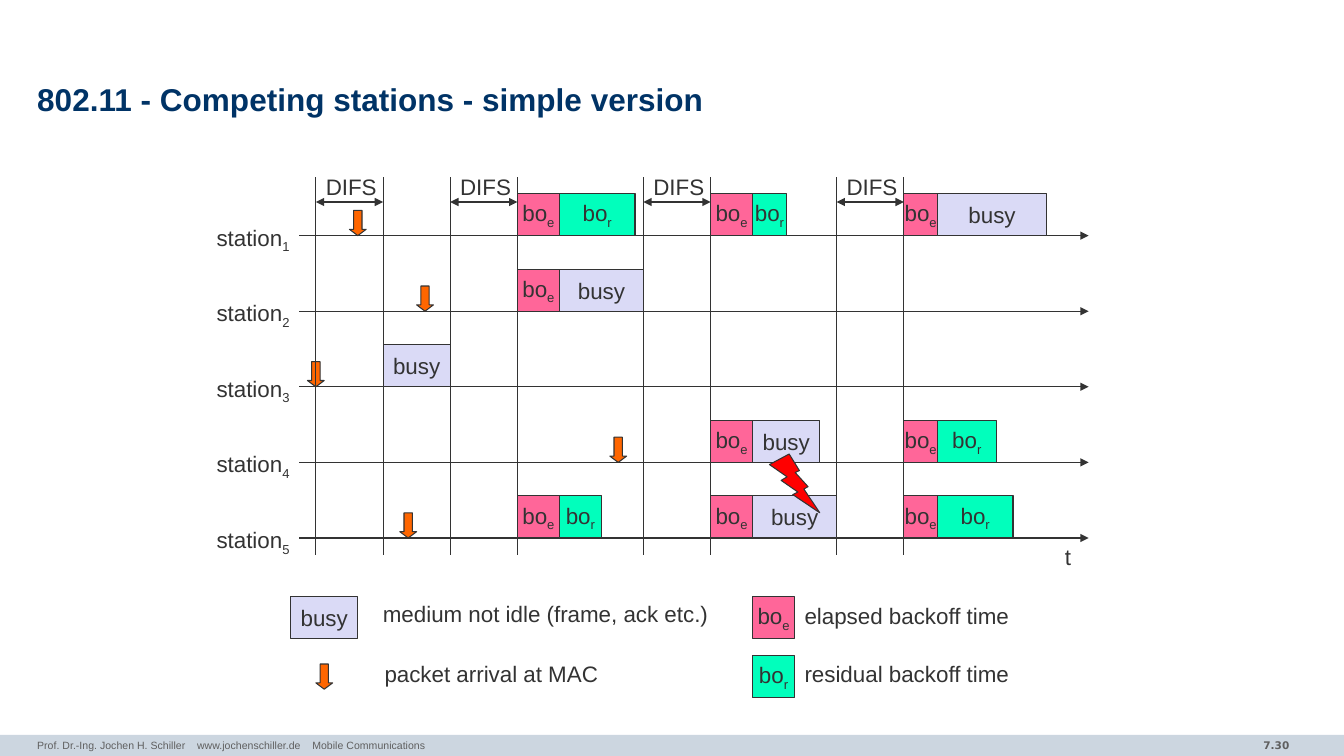
from lxml import etree
from pptx import Presentation
from pptx.dml.color import RGBColor
from pptx.enum.shapes import MSO_CONNECTOR, MSO_SHAPE
from pptx.enum.text import MSO_ANCHOR, MSO_AUTO_SIZE, PP_ALIGN
from pptx.oxml.ns import qn
from pptx.util import Pt

LEFT, CENTER, RIGHT = PP_ALIGN.LEFT, PP_ALIGN.CENTER, PP_ALIGN.RIGHT
TOP, MIDDLE = MSO_ANCHOR.TOP, MSO_ANCHOR.MIDDLE
FIT, FIXED = MSO_AUTO_SIZE.SHAPE_TO_FIT_TEXT, MSO_AUTO_SIZE.NONE
RECT, DOWN, BOLT = MSO_SHAPE.RECTANGLE, MSO_SHAPE.DOWN_ARROW, MSO_SHAPE.LIGHTNING_BOLT
STRAIGHT = MSO_CONNECTOR.STRAIGHT

INK, GREY, NAVY, BAND = "333333", "5F5F5F", "003366", "CCD6E0"
ORANGE, RED = "FF6600", "FF0000"
U = 6
BLOCKS = {
    "busy": ("DADAF6", "busy", ""),
    "elapsed": ("FF6699", "bo", "e"),
    "residual": ("01FFBC", "bo", "r"),
}
BODY = {"size": Pt(16), "name": "Arial"}
SMALL = {"size": Pt(7.5), "name": "Arial"}
PAGE = {"size": Pt(7.5), "name": "DejaVu Sans", "bold": True}
HEADING = {"size": Pt(22.5), "name": "Arial", "bold": True}

GUIDES = [0, 8, 16, 24, 39, 47, 62, 70]
ARRIVALS = [4, 12, -1, 35, 10]
SCHEDULE = [
    [(24, "elapsed", 5), (29, "residual", 9), (47, "elapsed", 5),
     (52, "residual", 4), (70, "elapsed", 4), (74, "busy", 13)],
    [(24, "elapsed", 5), (29, "busy", 10)],
    [(8, "busy", 8)],
    [(47, "elapsed", 5), (52, "busy", 8), (70, "elapsed", 4), (74, "residual", 7)],
    [(24, "elapsed", 5), (29, "residual", 5), (47, "elapsed", 5),
     (52, "busy", 10), (70, "elapsed", 4), (74, "residual", 9)],
]


def rgb(value):
    return RGBColor.from_string(value)


def write(tf, text, sub="", font=BODY, color=INK, align=LEFT):
    p = tf.paragraphs[0]
    p.alignment = align
    for part in filter(None, (text, sub)):
        r = p.add_run()
        r.text = part
        for key, value in font.items():
            setattr(r.font, key, value)
        r.font.color.rgb = rgb(color)
    if sub:
        r.font._element.set("baseline", "-25000")
    return p


def add_label(s, x, y, w, text, sub=""):
    tf = s.shapes.add_textbox(Pt(x), Pt(y), Pt(w), Pt(26.6)).text_frame
    tf.word_wrap = False
    tf.auto_size = FIT
    write(tf, text, sub)


def add_figure(s, kind, x, y, w, h, fill, line=INK):
    sp = s.shapes.add_shape(kind, Pt(x), Pt(y), Pt(w), Pt(h))
    sp.shadow.inherit = False
    sp.fill.solid()
    sp.fill.fore_color.rgb = rgb(fill)
    if line:
        sp.line.color.rgb = rgb(line)
        sp.line.width = Pt(0.75)
    else:
        sp.line.fill.background()
    return sp


def add_block(s, x, y, w, kind):
    fill, text, sub = BLOCKS[kind]
    tf = add_figure(s, RECT, x, y, w, 5 * U, fill).text_frame
    tf.word_wrap = False
    tf.vertical_anchor = MIDDLE
    write(tf, text, sub, align=CENTER)


def add_arrival(s, x, y):
    sp = add_figure(s, DOWN, x, y, 2 * U, 3 * U, ORANGE)
    sp.adjustments[0] = 0.5
    sp.adjustments[1] = 0.375


def add_line(s, x1, y1, x2, y2, ends=()):
    c = s.shapes.add_connector(STRAIGHT, Pt(x1), Pt(y1), Pt(x2), Pt(y2))
    c.line.color.rgb = rgb(INK)
    c.line.width = Pt(0.75)
    spPr = c._element.spPr
    etree.SubElement(spPr, qn("a:effectLst"))
    for end in ends:
        etree.SubElement(spPr.find(qn("a:ln")), qn(end)).set("type", "triangle")


def add_title(s, x, y, w, h):
    sp = s.shapes.title
    sp.left, sp.top, sp.width, sp.height = Pt(x), Pt(y), Pt(w), Pt(h)
    tf = sp.text_frame
    frame = {"margin_left": 0, "margin_right": 0, "margin_top": 0, "margin_bottom": 0,
             "vertical_anchor": MIDDLE, "word_wrap": True, "auto_size": FIXED}
    for key, value in frame.items():
        setattr(tf, key, value)
    p = write(tf, "802.11 - Competing stations - simple version", font=HEADING, color=NAVY)
    p.line_spacing = 0.85


def add_footer(s, x, y, w, h):
    add_figure(s, RECT, x, y, w, h, BAND, None)
    credit = "Prof. Dr.-Ing. Jochen H. Schiller    www.jochenschiller.de    Mobile Communications"
    items = [
        (26.6, 628, 0, TOP, credit, SMALL, LEFT),
        (799.2, 128.9, 7.2, MIDDLE, "7.30", PAGE, RIGHT),
    ]
    for dx, width, inset, anchor, text, font, align in items:
        tf = s.shapes.add_textbox(Pt(x + dx), Pt(y - 0.7), Pt(width), Pt(16)).text_frame
        tf.word_wrap = True
        tf.margin_left = tf.margin_right = Pt(inset)
        tf.vertical_anchor = anchor
        write(tf, text, font=font, color=GREY, align=align)


def add_timeline(s, x, y, w, h):
    rows = [y + (7 + 9 * i) * U for i in range(len(SCHEDULE))]
    for i, base in enumerate(rows):
        add_line(s, x - 2 * U, base, x + w, base, ["a:tailEnd"])
        add_label(s, x - 13 * U, base - 2 * U, 67.7, "station", str(i + 1))
        add_arrival(s, x + ARRIVALS[i] * U, base - 3 * U)
    add_label(s, x + w - 4 * U, rows[-1], 18.7, "t")
    for guide in GUIDES:
        add_line(s, x + guide * U, y + h, x + guide * U, y)
    for start, end in zip(GUIDES[::2], GUIDES[1::2]):
        add_label(s, x + start * U, y - U, 51.1, "DIFS")
        add_line(s, x + start * U, y + 3 * U, x + end * U, y + 3 * U,
                 ["a:headEnd", "a:tailEnd"])
    for base, blocks in zip(rows, SCHEDULE):
        for start, kind, length in blocks:
            add_block(s, x + start * U, base - 5 * U, length * U, kind)
    add_figure(s, BOLT, x + 54 * U, y + 33 * U, 6 * U, 7 * U, RED)


def add_legend(s, x, y):
    second = y + 7 * U
    add_block(s, x, y, 8 * U, "busy")
    add_label(s, x + 58.8, y - 1.5, 252.7, "medium not idle (frame, ack etc.)")
    add_arrival(s, x + 3 * U, second + U)
    add_label(s, x + 10 * U, second, 167.8, "packet arrival at MAC")
    for kind, top in (("elapsed", y), ("residual", second)):
        add_block(s, x + 55 * U, top, 5 * U, kind)
        add_label(s, x + 60 * U, top, 161.3, kind + " backoff time")


def main():
    prs = Presentation()
    prs.slide_width, prs.slide_height = Pt(960), Pt(540)
    s = prs.slides.add_slide(prs.slide_layouts[5])
    add_footer(s, 0, 524.9, 960, 15.1)
    add_title(s, 26.6, 56.2, 907, 33.8)
    add_timeline(s, 225.6, 126.3, 92 * U, 45 * U)
    add_legend(s, 207.6, 426.3)
    prs.save("out.pptx")


if __name__ == "__main__":
    main()
